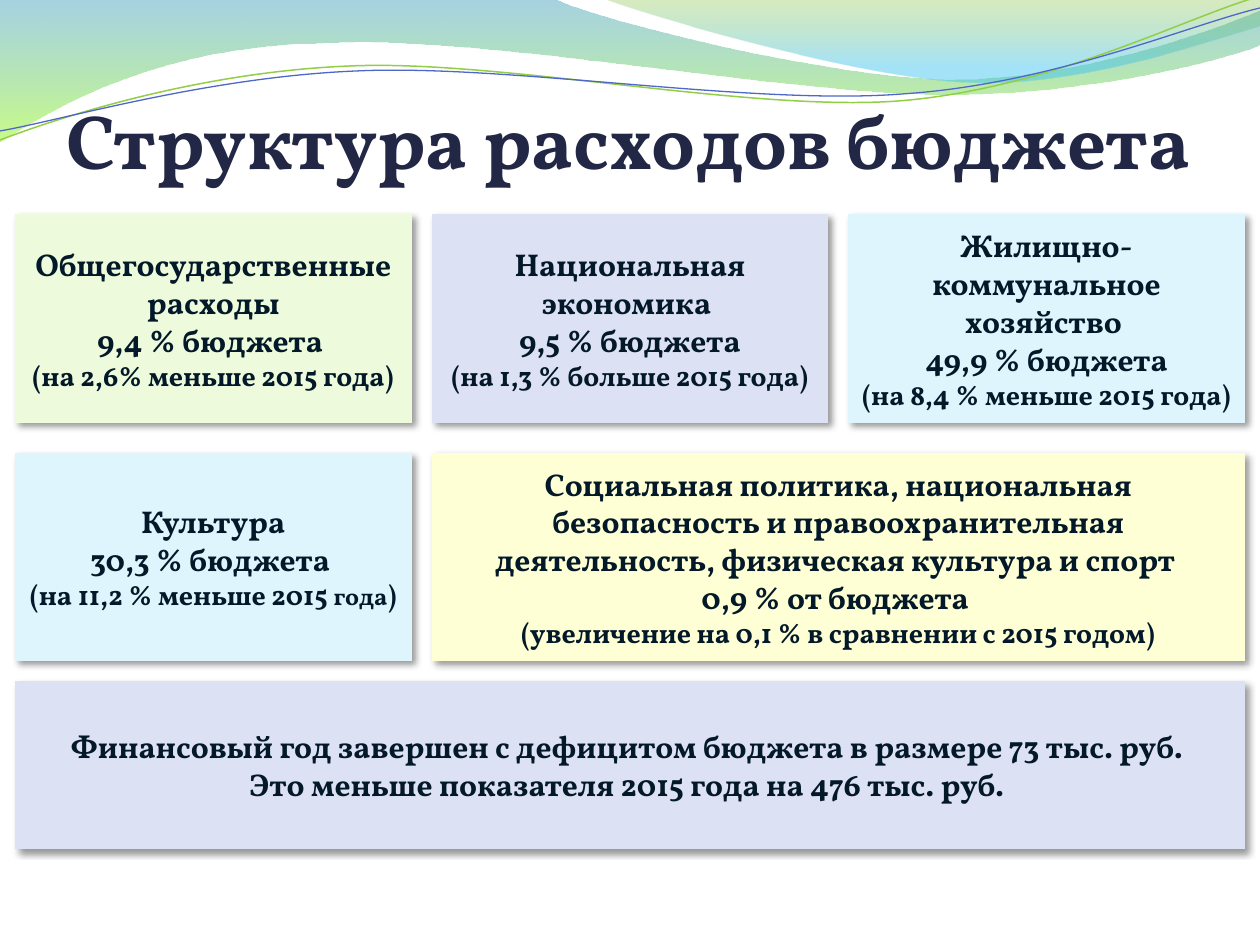
"""Build the slide on the structure of budget spending."""
import pptx
import pptx.dml.color
import pptx.enum.shapes
import pptx.enum.text
import pptx.oxml
import pptx.oxml.ns
import pptx.util

RGB = pptx.dml.color.RGBColor
PX = 914400 / 126
FONT = "Vollkorn"
NAVY, INK = RGB(0x21, 0x27, 0x45), RGB(0x03, 0x18, 0x28)
MINT, LAVENDER = RGB(0xED, 0xFB, 0xDC), RGB(0xDC, 0xE1, 0xF4)
SKY, CREAM = RGB(0xDF, 0xF5, 0xFD), RGB(0xFE, 0xFF, 0xD5)
TEAL, LIME = RGB(0x3B, 0x9C, 0xBF), RGB(0x9C, 0xFA, 0x24)
OLIVE, AZURE = RGB(0x7E, 0xBE, 0x2C), RGB(0x39, 0xC1, 0xF1)
GREEN, BLUE = RGB(0x93, 0xCE, 0x48), RGB(0x4E, 0x67, 0xC8)

TITLE = "Структура расходов бюджета"
LARGE, MEDIUM, SMALL = 18, 16, 14
MARGIN, GAP, COLUMNS, CONTENT_WIDTH = 15, 20, 3, 1230
ROWS = [(214, 209), (453, 208), (681, 168)]

# row, column, span, fill, lines of (text, size) runs
BOXES = [
    (0, 0, 1, MINT, [[("Общегосударственные расходы", LARGE)],
                     [("9,4 % бюджета ", LARGE)],
                     [("(на 2,6% меньше 2015 года)", MEDIUM)]]),
    (0, 1, 1, LAVENDER, [[("Национальная экономика ", LARGE)],
                         [("9,5 % бюджета", LARGE)],
                         [("(на 1,3 % больше 2015 года)", MEDIUM)]]),
    (0, 2, 1, SKY, [[("Жилищно-коммунальное хозяйство ", LARGE)],
                    [("49,9 % бюджета", LARGE)],
                    [("(на 8,4 % меньше 2015 года)", MEDIUM)]]),
    (1, 0, 1, SKY, [[("Культура", LARGE)],
                    [("30,3 % бюджета ", LARGE)],
                    [("(на 11,2 % меньше 2015 ", MEDIUM), ("года", SMALL), (")", MEDIUM)]]),
    (1, 1, 2, CREAM, [[("Социальная политика, национальная безопасность и правоохранительная "
                        "деятельность, физическая культура и спорт ", LARGE)],
                      [("0,9 % от бюджета ", LARGE)],
                      [("(увеличение на 0,1 % в сравнении с 2015 годом)", MEDIUM)]]),
    (2, 0, 3, LAVENDER, [[("Финансовый год завершен с дефицитом бюджета в размере 73 тыс. руб. ", LARGE)],
                         [("Это меньше показателя 2015 года на 476 тыс. руб. ", LARGE)]]),
]

WAVES = [
    ([(0, 0), (554, -1), (600, 21, 837, 79, 955, 79), (1075, 79, 1207, 33, 1260, 11),
      (1261, 45), (1239, 55, 1096, 96, 940, 94), (784, 94, 481, 35, 324, 43),
      (163, 45, 58, 105, -1, 142)], [(0, TEAL, 45), (100, LIME, 55)]),
    ([(604, -1), (641, 14, 859, 78, 969, 82), (1079, 87, 1211, 40, 1260, 26), (1260, 0)],
     [(0, OLIVE, 30), (80, AZURE, 45)]),
]
STRANDS = [
    ([(0, 140), (60, 117, 199, 72, 349, 66), (498, 59, 747, 112, 898, 101),
      (1050, 89, 1182, 19, 1257, -3)], GREEN, 0.85),
    ([(0, 131), (59, 121, 207, 77, 357, 71), (508, 64, 752, 106, 903, 94),
      (1053, 84, 1186, 26, 1260, 8)], BLUE, 0.75),
]


def px(length):
    return pptx.util.Emu(round(length * PX))


def bend(shape, segments):
    lines = shape._element.spPr.findall(".//" + pptx.oxml.ns.qn("a:lnTo"))
    for line, segment in zip(lines, segments):
        if len(segment) == 6:
            points = "".join(f'<a:pt x="{px(x) - shape.left}" y="{px(y) - shape.top}"/>'
                             for x, y in zip(segment[::2], segment[1::2]))
            line.getparent().replace(line, pptx.oxml.parse_xml(
                f'<a:cubicBezTo {pptx.oxml.ns.nsdecls("a")}>{points}</a:cubicBezTo>'))


def add_curve(slide, segments, close):
    points = [(px(segment[-2]), px(segment[-1])) for segment in segments]
    builder = slide.shapes.build_freeform(*points[0], scale=1.0)
    builder.add_line_segments(points[1:], close=close)
    shape = builder.convert_to_shape()
    shape.shadow.inherit = False
    bend(shape, segments[1:])
    return shape


def add_wave(slide, segments, stops):
    shape = add_curve(slide, segments, True)
    shape.line.fill.background()
    shape.fill.gradient()
    shape.fill.gradient_angle = 270
    for stop, (position, color, _) in zip(shape.fill.gradient_stops, stops):
        stop.position = position / 100
        stop.color.rgb = color
    colors = shape._element.spPr.findall(".//" + pptx.oxml.ns.qn("a:srgbClr"))
    for element, (_, _, opacity) in zip(colors, stops):
        element.append(pptx.oxml.parse_xml(
            f'<a:alpha {pptx.oxml.ns.nsdecls("a")} val="{opacity * 1000}"/>'))


def add_strand(slide, segments, color, width):
    shape = add_curve(slide, segments, False)
    shape.fill.background()
    shape.line.color.rgb = color
    shape.line.width = pptx.util.Pt(width)


def add_shadow(shape):
    shape.shadow.inherit = False
    effects = shape._element.spPr.find(pptx.oxml.ns.qn("a:effectLst"))
    effects.append(pptx.oxml.parse_xml(
        f'<a:outerShdw {pptx.oxml.ns.nsdecls("a")} blurRad="{pptx.util.Pt(4)}" '
        f'dist="{pptx.util.Pt(3)}" dir="2700000" algn="tl" rotWithShape="0">'
        '<a:srgbClr val="000000"><a:alpha val="40000"/></a:srgbClr></a:outerShdw>'))


def style_paragraph(paragraph, size, color):
    paragraph.alignment = pptx.enum.text.PP_ALIGN.CENTER
    paragraph.font.name = FONT
    paragraph.font.size = pptx.util.Pt(size)
    paragraph.font.bold = True
    paragraph.font.color.rgb = color


def add_box(slide, row, column, span, fill, lines):
    column_width = (CONTENT_WIDTH - GAP * (COLUMNS - 1)) / COLUMNS
    left = MARGIN + column * (column_width + GAP)
    width = span * column_width + (span - 1) * GAP
    top, height = ROWS[row]
    shape = slide.shapes.add_shape(pptx.enum.shapes.MSO_SHAPE.FLOWCHART_PROCESS,
                                   px(left), px(top), px(width), px(height))
    shape.fill.solid()
    shape.fill.fore_color.rgb = fill
    shape.line.fill.background()
    add_shadow(shape)
    frame = shape.text_frame
    frame.word_wrap = True
    frame.vertical_anchor = pptx.enum.text.MSO_ANCHOR.MIDDLE
    for index, runs in enumerate(lines):
        paragraph = frame.add_paragraph() if index else frame.paragraphs[0]
        style_paragraph(paragraph, runs[0][1], INK)
        for text, size in runs:
            run = paragraph.add_run()
            run.text = text
            if size != runs[0][1]:
                run.font.size = pptx.util.Pt(size)


def set_title(slide):
    title = slide.shapes.title
    title.left, title.top, title.width, title.height = px(62), px(86), px(1134), px(99)
    frame = title.text_frame
    frame.text = TITLE
    frame.word_wrap = True
    frame.auto_size = pptx.enum.text.MSO_AUTO_SIZE.NONE
    frame.vertical_anchor = pptx.enum.text.MSO_ANCHOR.BOTTOM
    frame.margin_left = frame.margin_right = frame.margin_bottom = 0
    style_paragraph(frame.paragraphs[0], 44, NAVY)


def main():
    presentation = pptx.Presentation()
    presentation.slide_width, presentation.slide_height = px(1260), px(945)
    slide = presentation.slides.add_slide(presentation.slide_layouts[5])
    for wave in WAVES:
        add_wave(slide, *wave)
    for strand in STRANDS:
        add_strand(slide, *strand)
    set_title(slide)
    slide.shapes[-1]._element.addnext(slide.shapes.title._element)
    for box in BOXES:
        add_box(slide, *box)
    presentation.save("out.pptx")


if __name__ == "__main__":
    main()
